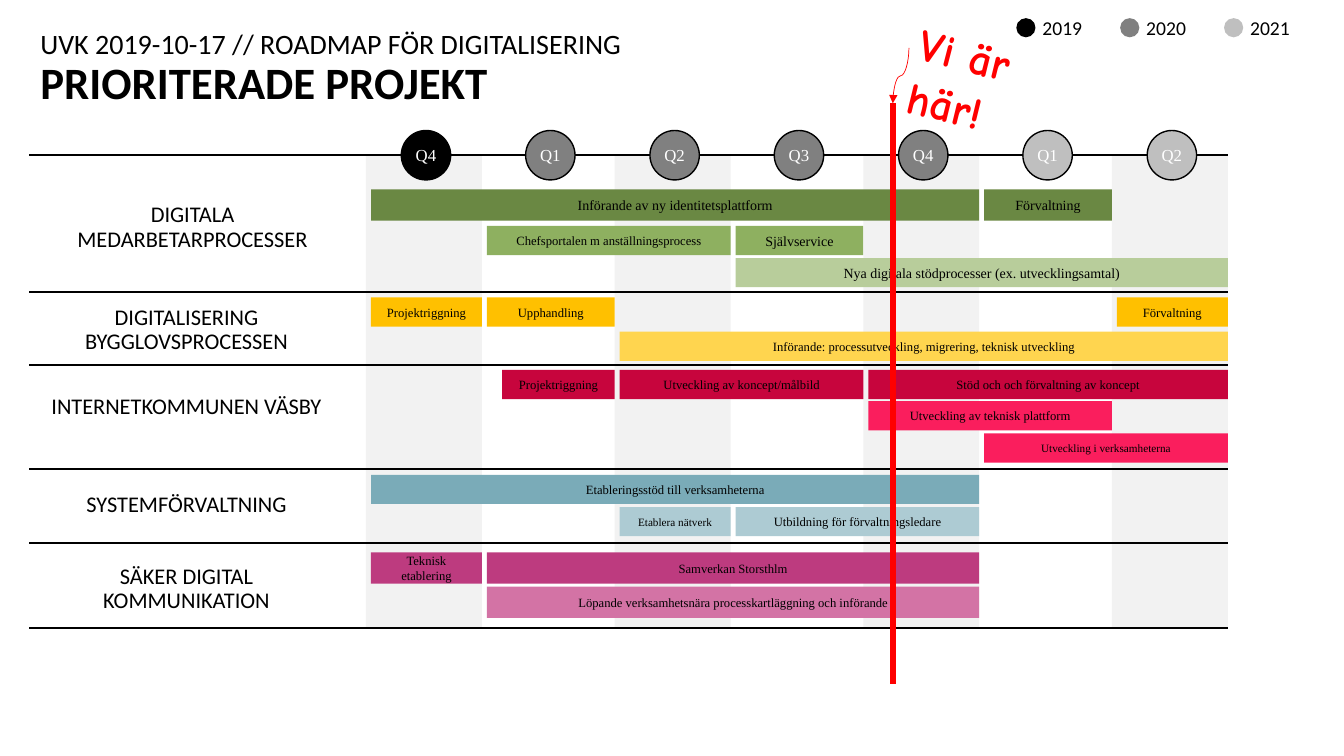
"""Build the roadmap slide for prioritised digitalisation projects."""
from dataclasses import dataclass
from typing import Optional

from lxml.etree import SubElement
from pptx import Presentation
from pptx.dml.color import RGBColor
from pptx.enum.shapes import MSO_CONNECTOR as Link, MSO_SHAPE as Form
from pptx.enum.text import MSO_ANCHOR as Anchor, MSO_AUTO_SIZE as Fit, PP_ALIGN as Align
from pptx.oxml.ns import qn
from pptx.util import Inches, Pt

COLORS = {
    "black": "000000", "white": "FFFFFF", "red": "FF0000", "band": "F2F2F2",
    "2019": "000000", "2020": "808080", "2021": "BFBFBF",
    "green": "6A8843", "mid green": "8EB060", "pale green": "B8CD9B",
    "amber": "FFC000", "pale amber": "FFD54F",
    "crimson": "C7053D", "pink": "FA1E5D",
    "teal": "7AABB8", "pale teal": "ADCBD3",
    "plum": "BD3B7F", "pale plum": "D373A5",
}
SANS, SERIF, HAND = "Calibri", "Times New Roman", "Comic Neue"
GRID_LEFT, PAIR_WIDTH, BAND_WIDTH = 3.63, 2.466, 1.15
RULE_LEFT, RULE_RIGHT = 0.29, 12.18
GRID_TOP, GRID_BOTTOM = 1.54, 6.23
DOT, LEGEND_DOT = 0.49, 0.19
NOW = 8.86


@dataclass
class Quarter:
    name: str
    year: str


@dataclass
class Bar:
    text: str
    first: int
    last: int
    color: str
    size: int = 9
    gap: float = 0.05


@dataclass
class Lane:
    top: float
    height: float
    bars: list[Bar]


@dataclass
class Track:
    name: str
    label_left: float
    label_top: float
    bottom: float
    lanes: list[Lane]


QUARTERS = [
    Quarter("Q4", "2019"), Quarter("Q1", "2020"), Quarter("Q2", "2020"), Quarter("Q3", "2020"),
    Quarter("Q4", "2020"), Quarter("Q1", "2021"), Quarter("Q2", "2021"),
]
TRACKS = [
    Track("DIGITALA MEDARBETARPROCESSER", 0.46, 2.02, 2.9, [
        Lane(1.88, 0.31, [Bar("Införande av ny identitetsplattform", 0, 5, "green", 10),
                          Bar("Förvaltning", 5, 6, "green", 10)]),
        Lane(2.24, 0.29, [Bar("Chefsportalen m anställningsprocess", 1, 3, "mid green"),
                          Bar("Självservice", 3, 4, "mid green", 10)]),
        Lane(2.56, 0.29, [Bar("Nya digitala stödprocesser (ex. utvecklingsamtal)", 3, 7,
                              "pale green", 10)]),
    ]),
    Track("DIGITALISERING BYGGLOVSPROCESSEN", 0.4, 3.04, 3.62, [
        Lane(2.95, 0.29, [Bar("Projektriggning", 0, 1, "amber"), Bar("Upphandling", 1, 2, "amber"),
                          Bar("Förvaltning", 6, 7, "amber")]),
        Lane(3.29, 0.29, [Bar("Införande: processutveckling, migrering, teknisk utveckling", 2, 7,
                              "pale amber")]),
    ]),
    Track("INTERNETKOMMUNEN VÄSBY", 0.4, 3.92, 4.65, [
        Lane(3.67, 0.29, [Bar("Projektriggning", 1, 2, "crimson", gap=0.2),
                          Bar("Utveckling av koncept/målbild", 2, 4, "crimson"),
                          Bar("Stöd och och förvaltning av koncept", 4, 7, "crimson")]),
        Lane(3.98, 0.29, [Bar("Utveckling av teknisk plattform", 4, 6, "pink")]),
        Lane(4.3, 0.29, [Bar("Utveckling i verksamheterna", 5, 7, "pink", 8)]),
    ]),
    Track("SYSTEMFÖRVALTNING", 0.4, 4.89, 5.39, [
        Lane(4.71, 0.29, [Bar("Etableringsstöd till verksamheterna", 0, 5, "teal")]),
        Lane(5.03, 0.29, [Bar("Etablera nätverk", 2, 3, "pale teal", 8),
                          Bar("Utbildning för förvaltningsledare", 3, 5, "pale teal")]),
    ]),
    Track("SÄKER DIGITAL KOMMUNIKATION", 0.4, 5.61, GRID_BOTTOM, [
        Lane(5.48, 0.31, [Bar("Teknisk etablering", 0, 1, "plum"),
                          Bar("Samverkan Storsthlm", 1, 5, "plum")]),
        Lane(5.82, 0.31, [Bar("Löpande verksamhetsnära processkartläggning och införande", 1, 5,
                              "pale plum")]),
    ]),
]


def rgb(name: str) -> RGBColor:
    return RGBColor.from_string(COLORS[name])


def column_edge(column: int) -> float:
    pair, odd = divmod(column, 2)
    return GRID_LEFT + pair * PAIR_WIDTH + odd * BAND_WIDTH


def place(shape, left: float, top: float, width: float, height: float) -> None:
    shape.left, shape.top = Inches(left), Inches(top)
    shape.width, shape.height = Inches(width), Inches(height)


def write(shape, text: str, *, size: int, font: str = SANS, color: str = "black",
          bold: bool = False, align=Align.LEFT, anchor=Anchor.TOP, fit=Fit.NONE,
          wrap: bool = True, inset: Optional[float] = None,
          spacing: Optional[float] = None) -> None:
    frame = shape.text_frame
    frame.word_wrap, frame.auto_size, frame.vertical_anchor = wrap, fit, anchor
    if inset is not None:
        frame.margin_left = frame.margin_right = Inches(inset)
        frame.margin_top = frame.margin_bottom = Inches(inset)
    para = frame.paragraphs[0]
    para.alignment, para.line_spacing, para.space_before = align, spacing, Pt(0)
    span = para.add_run()
    span.text = text
    span.font.size, span.font.name, span.font.bold = Pt(size), font, bold
    span.font.color.rgb = rgb(color)


def draw_shape(page, form, left: float, top: float, width: float, height: float,
               fill: str, outline: Optional[str] = None):
    shape = page.shapes.add_shape(form, 0, 0, 0, 0)
    place(shape, left, top, width, height)
    shape.shadow.inherit = False
    shape.fill.solid()
    shape.fill.fore_color.rgb = rgb(fill)
    if outline:
        shape.line.color.rgb, shape.line.width = rgb(outline), Pt(1)
    else:
        shape.line.fill.background()
    return shape


def draw_line(page, x1: float, y1: float, x2: float, y2: float,
              color: str = "black", weight: float = 1.5, kind=Link.STRAIGHT):
    line = page.shapes.add_connector(kind, Inches(x1), Inches(y1), Inches(x2), Inches(y2))
    line.line.color.rgb, line.line.width = rgb(color), Pt(weight)
    SubElement(line.element.spPr, qn("a:effectLst"))
    return line


def draw_label(box, track: Track) -> None:
    place(box, track.label_left, track.label_top, 2.9, 0.89)
    write(box, track.name, size=16, align=Align.CENTER, inset=0, spacing=0.9)


def draw_track(page, track: Track) -> None:
    draw_line(page, RULE_LEFT, track.bottom, RULE_RIGHT, track.bottom)
    for lane in track.lanes:
        for bar in lane.bars:
            left = column_edge(bar.first) + bar.gap
            box = draw_shape(page, Form.RECTANGLE, left, lane.top,
                             column_edge(bar.last) - left, lane.height, bar.color)
            write(box, bar.text, size=bar.size, font=SERIF, align=Align.CENTER,
                  anchor=Anchor.MIDDLE)


def draw_now_marker(page) -> None:
    draw_line(page, NOW, 1.02, NOW, 6.79, "red", 4.5)
    note = page.shapes.add_textbox(Inches(9.01), Inches(0.32), Inches(2), Inches(0.64))
    note.rotation = 13.7
    write(note, "Vi är här!", size=32, font=HAND, color="red", bold=True, wrap=False,
          fit=Fit.SHAPE_TO_FIT_TEXT)
    arrow = draw_line(page, 8.66, 0.67, 9.21, 0.83, "red", 0.5, Link.CURVE)
    arrow.element.spPr.find(qn("a:xfrm")).set("rot", str(90 * 60000))
    SubElement(arrow.element.spPr.find(qn("a:ln")), qn("a:tailEnd"), type="triangle")


def main() -> None:
    deck = Presentation()
    deck.slide_width, deck.slide_height = Inches(13.33), Inches(7.5)
    page = deck.slides.add_slide(deck.slide_layouts[1])
    title, body = page.placeholders

    place(title, 0.4, 0.3, 7.76, 0.89)
    write(title, "UVK 2019-10-17 // ROADMAP FÖR DIGITALISERING", size=20, inset=0, spacing=0.9)
    title.text_frame.paragraphs[0].add_line_break()
    write(title, "PRIORITERADE PROJEKT", size=32, bold=True, inset=0, spacing=0.9)

    for column in range(0, len(QUARTERS), 2):
        draw_shape(page, Form.RECTANGLE, column_edge(column), GRID_TOP, BAND_WIDTH,
                   GRID_BOTTOM - GRID_TOP, "band")
    draw_line(page, RULE_LEFT, GRID_TOP, RULE_RIGHT, GRID_TOP)
    for column, quarter in enumerate(QUARTERS):
        dot = draw_shape(page, Form.OVAL, 3.98 + column * PAIR_WIDTH / 2, GRID_TOP - DOT / 2,
                         DOT, DOT, quarter.year, "black")
        write(dot, quarter.name, size=12, font=SERIF, color="white", align=Align.CENTER,
              anchor=Anchor.MIDDLE, inset=0)
    for index, year in enumerate(("2019", "2020", "2021")):
        left = 10.08 + index * 1.03
        draw_shape(page, Form.OVAL, left, 0.18, LEGEND_DOT, LEGEND_DOT, year)
        box = page.shapes.add_textbox(Inches(left + 0.16), Inches(0.11), Inches(0.65), Inches(0.34))
        write(box, year, size=14)

    properties = body.text_frame.paragraphs[0]._p.get_or_add_pPr()
    properties.set("marL", "0")
    properties.set("indent", "0")
    SubElement(properties, qn("a:buNone"))
    for index, track in enumerate(TRACKS):
        draw_label(page.shapes.add_textbox(0, 0, 0, 0) if index else body, track)
        draw_track(page, track)
    draw_now_marker(page)
    deck.save("out.pptx")


if __name__ == "__main__":
    main()
